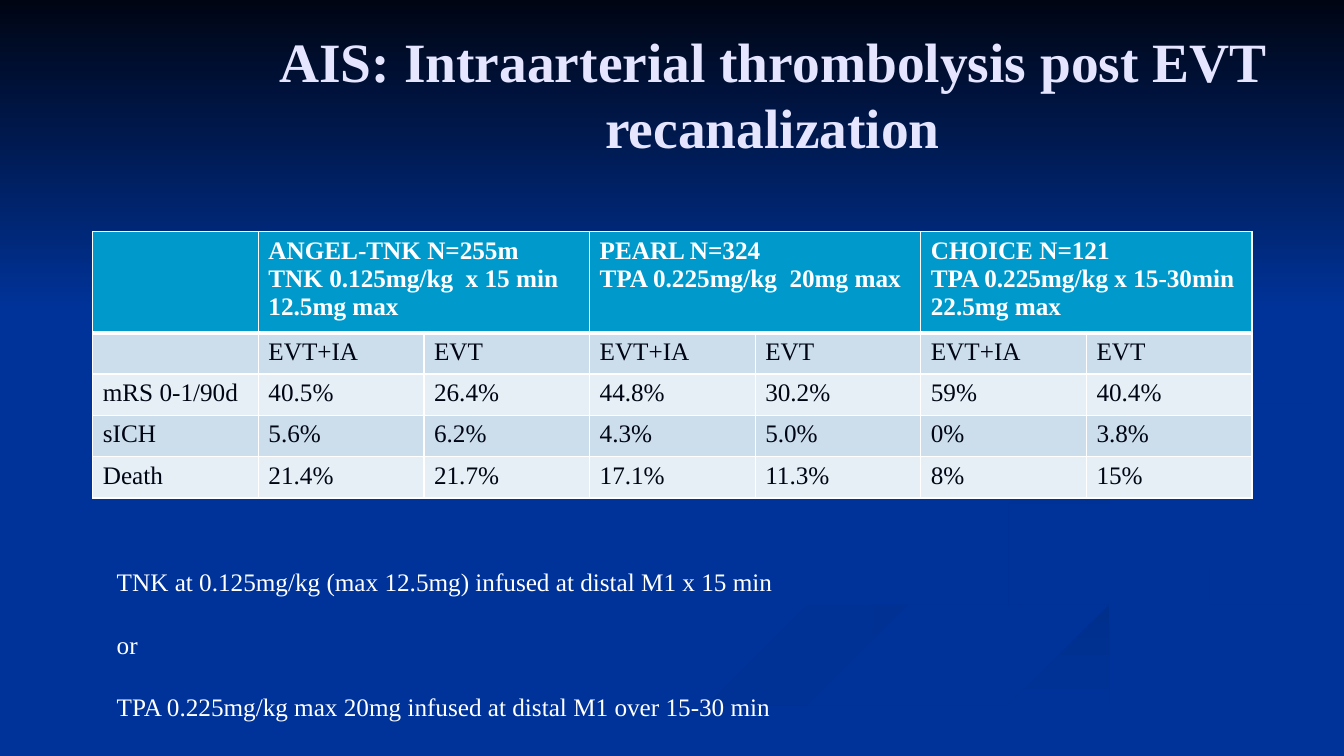
from dataclasses import dataclass

from lxml.etree import SubElement
from pptx import Presentation
from pptx.dml.color import RGBColor
from pptx.enum.shapes import MSO_SHAPE
from pptx.enum.text import MSO_ANCHOR, PP_ALIGN
from pptx.oxml.ns import qn
from pptx.util import Inches, Pt


@dataclass(frozen=True)
class Theme:
    font: str = "Times New Roman"
    title_size: float = 39.6
    body_size: float = 18
    paragraph_gap: float = 23
    background: str = "003399"
    night: str = "000514"
    title: str = "E5E5FF"
    white: str = "FFFFFF"
    ink: str = "000514"
    header: str = "0099CC"
    bands: tuple = ("CCDEEC", "E7EFF6")


THEME = Theme()

SWIRLS = [
    ("003399", "003193", 0, [
        [(7.67, 4.6), (8.2, 4.97), (9.5, 5.27), (10.42, 5.53)],
        [(10.42, 5.53), (10.95, 5.9), (9.6, 6.23), (7.1, 6.7), (4.82, 7.49)],
        [(4, 7.49), (6.1, 6.7), (8.7, 6.2), (10.9, 5.8), (10.27, 5.51)],
        [(10.27, 5.51), (9.3, 5.25), (8.1, 5), (7.6, 4.7)]]),
    ("003399", "003193", 45, [
        [(9.65, 4.64), (9.9, 5.05), (11.6, 5.2), (12.4, 5.53)],
        [(12.4, 5.53), (12.75, 5.75), (11.91, 6.05)],
        [(11.91, 6.05), (12.6, 5.75), (11.6, 5.44)],
        [(11.6, 5.44), (9.8, 5.15), (9.65, 4.64)]]),
    ("002F8C", "003399", 90, [
        [(6.71, 7.49), (8.3, 6.8), (12.3, 6.2), (13.31, 5.81)],
        [(13.31, 6.09), (9.8, 6.7), (7.62, 7.49)]]),
    ("003091", "003399", 45, [
        [(10.42, 4.6), (10.5, 4.25), (12.6, 4.2), (13.31, 4.02)],
        [(13.31, 4.2), (9.8, 4.5), (11.01, 4.96)]]),
]

TRIALS = [
    ["ANGEL-TNK N=255m", "TNK 0.125mg/kg  x 15 min 12.5mg max"],
    ["PEARL N=324", "TPA 0.225mg/kg  20mg max"],
    ["CHOICE N=121", "TPA 0.225mg/kg x 15-30min", "22.5mg max"],
]
OUTCOMES = [
    ["", *["EVT+IA", "EVT"] * len(TRIALS)],
    ["mRS 0-1/90d", "40.5%", "26.4%", "44.8%", "30.2%", "59%", "40.4%"],
    ["sICH", "5.6%", "6.2%", "4.3%", "5.0%", "0%", "3.8%"],
    ["Death", "21.4%", "21.7%", "17.1%", "11.3%", "8%", "15%"],
]
DOSING = [
    "TNK at 0.125mg/kg (max 12.5mg) infused at distal M1 x 15 min",
    "or",
    "TPA 0.225mg/kg max 20mg infused at distal M1 over 15-30 min",
]


def write_text(tf, lines, *, color, size=THEME.body_size, bold=False,
               align=PP_ALIGN.LEFT, gap=0):
    for i, line in enumerate(lines):
        p = tf.paragraphs[0] if i == 0 else tf.add_paragraph()
        p.alignment = align
        if i and gap:
            p.space_before = Pt(gap)
        r = p.add_run()
        r.text = line
        r.font.name = THEME.font
        r.font.size = Pt(size)
        r.font.bold = bold
        r.font.color.rgb = RGBColor.from_string(color)


def paint_gradient(sp, start, end, angle):
    sp.shadow.inherit = False
    sp.line.fill.background()
    sp.fill.gradient()
    sp.fill.gradient_angle = -angle % 360
    for stop, color in zip(sp.fill.gradient_stops, (start, end)):
        stop.color.rgb = RGBColor.from_string(color)


def curve_point(controls, t):
    while len(controls) > 1:
        controls = [(x0 + (x1 - x0) * t, y0 + (y1 - y0) * t)
                    for (x0, y0), (x1, y1) in zip(controls, controls[1:])]
    return controls[0]


def style_cell(cell, fill, top=1, bottom=1):
    cell.fill.solid()
    cell.fill.fore_color.rgb = RGBColor.from_string(fill)
    tcPr = cell._tc.get_or_add_tcPr()
    for i, (side, width) in enumerate(
            [("lnL", 1), ("lnR", 1), ("lnT", top), ("lnB", bottom)]):
        ln = SubElement(tcPr, qn(f"a:{side}"), w=str(Pt(width)))
        solid = SubElement(ln, qn("a:solidFill"))
        SubElement(solid, qn("a:srgbClr"), val=THEME.white)
        tcPr.insert(i, ln)


def add_backdrop(s, left, top, width, height, steps=16):
    s.background.fill.solid()
    s.background.fill.fore_color.rgb = RGBColor.from_string(THEME.background)
    for start, end, angle, curves in SWIRLS:
        points = [curve_point(curve, i / steps)
                  for curve in curves for i in range(steps + 1)]
        (x, y), *rest = [(left + px, top + py) for px, py in points]
        builder = s.shapes.build_freeform(x, y, scale=Inches(1))
        builder.add_line_segments(rest, close=True)
        paint_gradient(builder.convert_to_shape(), start, end, angle)
    sky = s.shapes.add_shape(MSO_SHAPE.RECTANGLE, Inches(left), Inches(top),
                             Inches(width), Inches(height))
    paint_gradient(sky, THEME.night, THEME.background, 90)


def add_text_box(s, left, top, width, height, lines, *, wrap=True,
                 anchor=MSO_ANCHOR.TOP, **fmt):
    tf = s.shapes.add_textbox(Inches(left), Inches(top), Inches(width),
                              Inches(height)).text_frame
    tf.word_wrap = wrap
    tf.vertical_anchor = anchor
    write_text(tf, lines, **fmt)


def add_trial_table(s, left, top, width, header_height, row_height):
    rows, cols = len(OUTCOMES) + 1, len(OUTCOMES[0])
    height = header_height + row_height * len(OUTCOMES)
    table = s.shapes.add_table(rows, cols, Inches(left), Inches(top),
                               Inches(width), Inches(height)).table
    table.horz_banding = False
    for col in table.columns:
        col.width = Inches(width / cols)
    for i, row in enumerate(table.rows):
        row.height = Inches(row_height if i else header_height)
    for cell in table.rows[0].cells:
        style_cell(cell, THEME.header, bottom=3)
    for i, trial in enumerate(TRIALS):
        cell = table.cell(0, 1 + 2 * i)
        cell.merge(table.cell(0, 2 + 2 * i))
        write_text(cell.text_frame, trial, color=THEME.white, bold=True)
    for i, values in enumerate(OUTCOMES):
        for j, value in enumerate(values):
            cell = table.cell(i + 1, j)
            style_cell(cell, THEME.bands[i % 2], top=1 if i else 3)
            if value:
                write_text(cell.text_frame, [value], color=THEME.ink)


def main():
    prs = Presentation()
    prs.slide_width, prs.slide_height = Inches(13.33), Inches(7.5)
    s = prs.slides.add_slide(prs.slide_layouts[6])
    add_backdrop(s, 0, 0, 13.33, 3.08)
    add_text_box(s, 2, 0.3, 11.33, 1.25,
                 ["AIS: Intraarterial thrombolysis post EVT recanalization"],
                 anchor=MSO_ANCHOR.MIDDLE, color=THEME.title,
                 size=THEME.title_size, bold=True, align=PP_ALIGN.CENTER)
    add_trial_table(s, 0.92, 2.3, 11.5, 0.93, 0.41)
    add_text_box(s, 1.06, 5.57, 6.94, 1.62, DOSING, wrap=False,
                 color=THEME.white, gap=THEME.paragraph_gap)
    prs.save("out.pptx")


if __name__ == "__main__":
    main()
